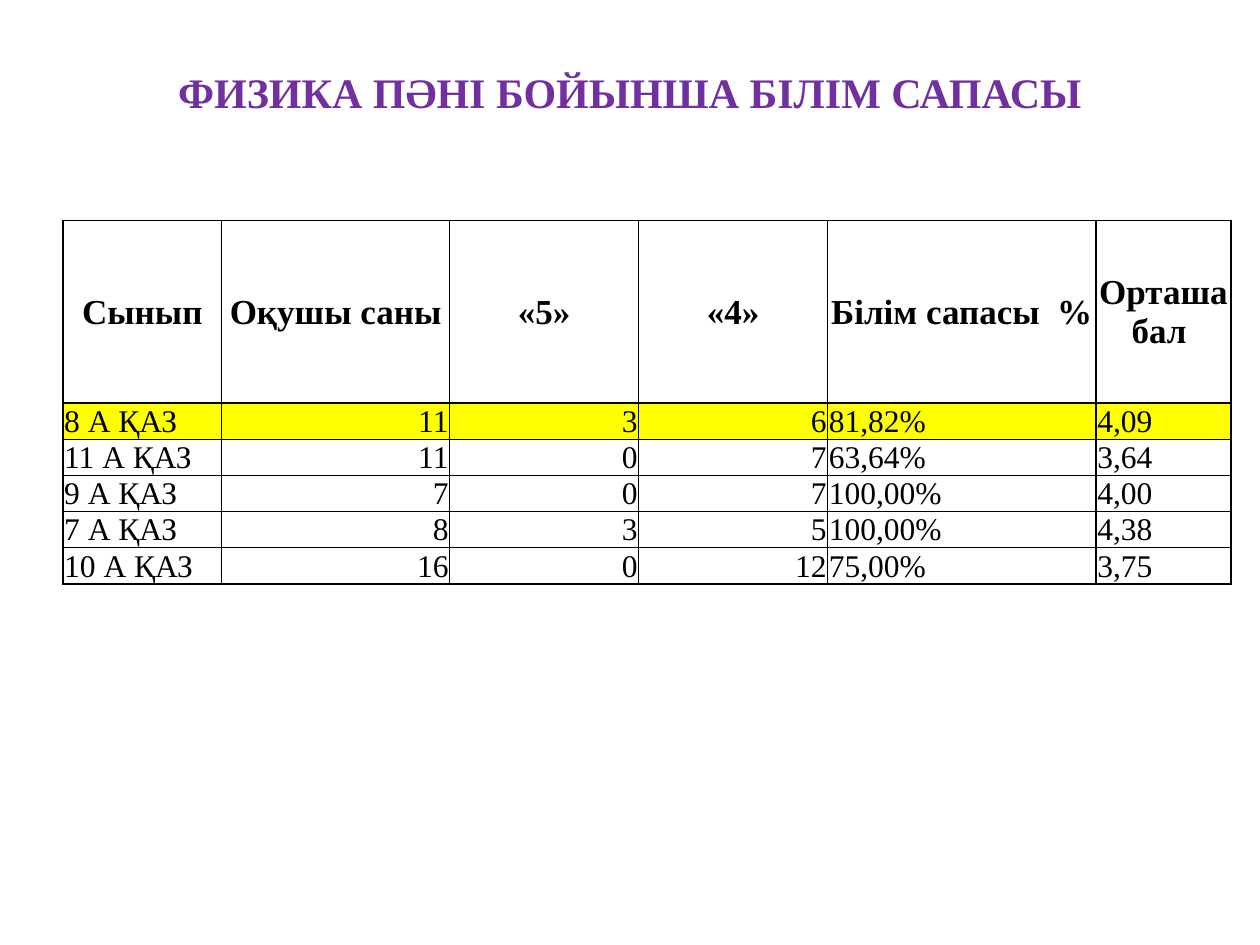
"""Builds the slide on the quality of knowledge in physics."""
from dataclasses import dataclass

from lxml.etree import SubElement as Sub
from pptx import Presentation
from pptx.dml.color import RGBColor as Rgb
from pptx.enum.text import MSO_ANCHOR as Anchor, PP_ALIGN as Align
from pptx.oxml.ns import qn
from pptx.util import Pt

FACE = "Times New Roman"
BLACK, WHITE, YELLOW, PURPLE = "000000", "FFFFFF", "FFFF00", "7030A0"
HEADS = ("Сынып", "Оқушы саны", "«5»", "«4»", "Білім сапасы  %", "Орташа бал ")
WIDTHS = (90.7, 130.3, 108, 108, 153.4, 77)
HEAD_H, ROW_H = 104.4, 14.4
SIDES = (Align.LEFT, Align.RIGHT, Align.RIGHT, Align.RIGHT, Align.LEFT, Align.LEFT)


@dataclass
class Grade:
    """One class and its results."""
    name: str
    pupils: int
    fives: int
    fours: int
    share: str
    mean: str
    fill: str = WHITE

    def texts(self) -> tuple:
        """Return the cell texts of the row."""
        return (self.name, str(self.pupils), str(self.fives),
                str(self.fours), self.share, self.mean)


@dataclass
class Style:
    """Look of the text in a row."""
    size: float
    bold: bool
    anchor: Anchor


GRADES = (
    Grade("8 А ҚАЗ", 11, 3, 6, "81,82%", "4,09", YELLOW),
    Grade("11 А ҚАЗ", 11, 0, 7, "63,64%", "3,64"),
    Grade("9 А ҚАЗ", 7, 0, 7, "100,00%", "4,00"),
    Grade("7 А ҚАЗ", 8, 3, 5, "100,00%", "4,38"),
    Grade("10 А ҚАЗ", 16, 0, 12, "75,00%", "3,75"),
)
HEAD = Style(20, True, Anchor.MIDDLE)
BODY = Style(18, False, Anchor.BOTTOM)


def paint(target, tint: str) -> None:
    """Give a fill a solid colour."""
    target.solid()
    target.fore_color.rgb = Rgb.from_string(tint)


def write(frame, text: str, size: float, bold: bool, tint: str, side: Align) -> None:
    """Set the text of a frame and format it."""
    frame.text = text
    para = frame.paragraphs[0]
    para.alignment = side
    for run in para.runs:
        font = run.font
        font.name, font.size, font.bold = FACE, Pt(size), bold
        paint(font.fill, tint)


def edge(cell) -> None:
    """Draw thin black borders around a cell."""
    props = cell._tc.get_or_add_tcPr()
    for tag in ("a:lnL", "a:lnR", "a:lnT", "a:lnB"):
        line = Sub(props, qn(tag), w=str(Pt(1)))
        Sub(Sub(line, qn("a:solidFill")), qn("a:srgbClr"), val=BLACK)


def fill_row(cells, texts: tuple, sides: tuple, style: Style, tint: str) -> None:
    """Fill and format one row of the table."""
    for cell, text, side in zip(cells, texts, sides):
        write(cell.text_frame, text, style.size, style.bold, BLACK, side)
        cell.vertical_anchor = style.anchor
        cell.margin_left = cell.margin_right = cell.margin_top = Pt(0.7)
        cell.margin_bottom = Pt(0)
        edge(cell)
        paint(cell.fill, tint)


def add_title(slide) -> None:
    """Place and format the title."""
    title = slide.shapes.title
    title.left, title.top, title.width, title.height = Pt(36), Pt(28), Pt(648), Pt(49)
    title.text_frame.vertical_anchor = Anchor.MIDDLE
    write(title.text_frame, "ФИЗИКА ПӘНІ БОЙЫНША БІЛІМ САПАСЫ", 24, True, PURPLE, Align.CENTER)


def add_grades(slide) -> None:
    """Add the table of results."""
    shape = slide.shapes.add_table(
        len(GRADES) + 1, len(HEADS), Pt(36), Pt(126), Pt(sum(WIDTHS)), Pt(215))
    table = shape.table
    for col, width in zip(table.columns, WIDTHS):
        col.width = Pt(width)
    for row in table.rows:
        row.height = Pt(ROW_H)
    top, *rest = table.rows
    top.height = Pt(HEAD_H)
    shape.height = Pt(215)
    fill_row(top.cells, HEADS, (Align.CENTER,) * len(HEADS), HEAD, WHITE)
    for row, grade in zip(rest, GRADES):
        fill_row(row.cells, grade.texts(), SIDES, BODY, grade.fill)


def main() -> None:
    """Build and save the slide."""
    deck = Presentation()
    deck.slide_width, deck.slide_height = Pt(720), Pt(540)
    slide = deck.slides.add_slide(deck.slide_layouts[5])
    add_title(slide)
    add_grades(slide)
    deck.save("out.pptx")


if __name__ == "__main__":
    main()
